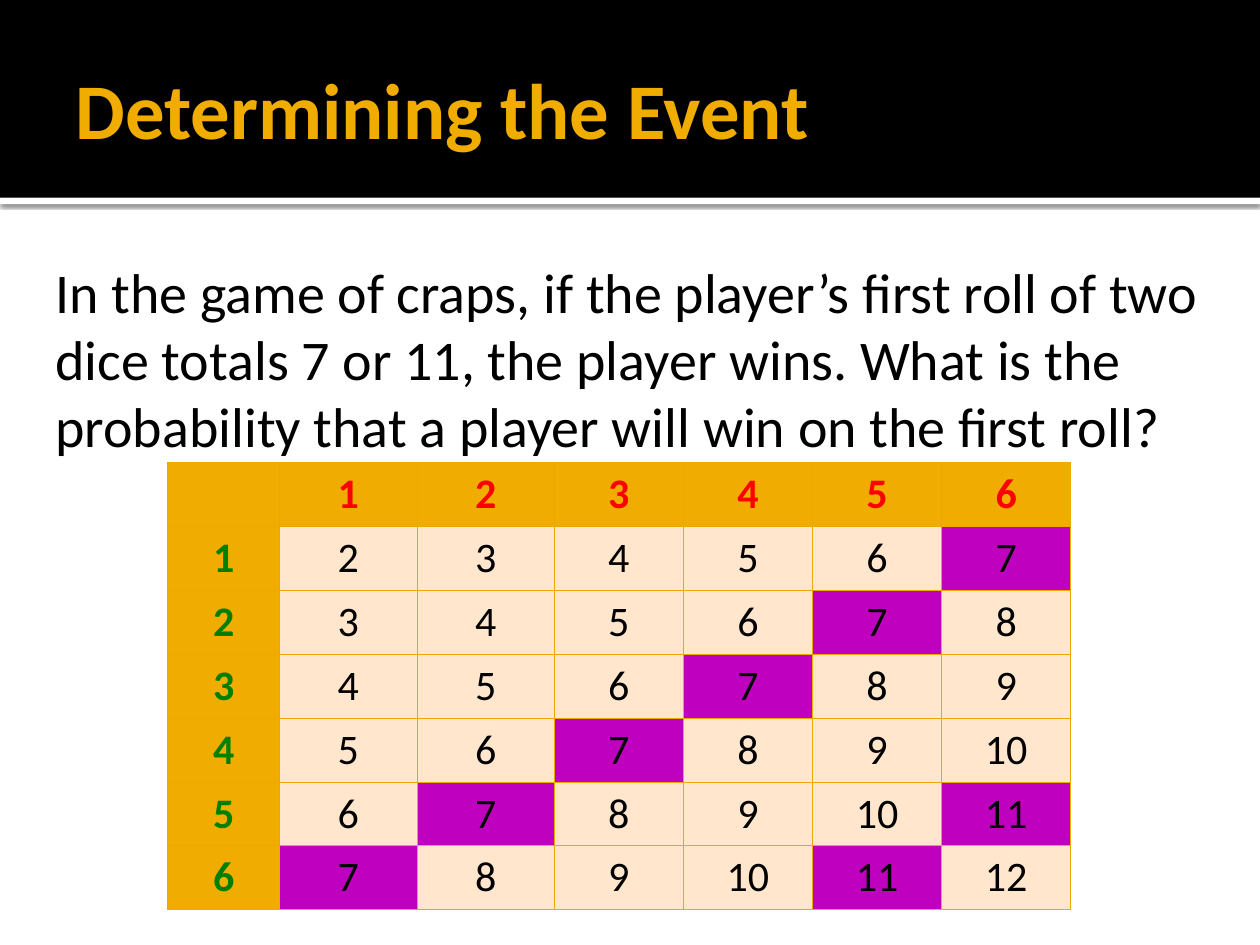
from pptx import Presentation
from pptx.dml.color import RGBColor
from pptx.enum.shapes import MSO_SHAPE as Shape
from pptx.enum.text import MSO_ANCHOR as Anchor, MSO_AUTO_SIZE as AutoSize, PP_ALIGN as Align
from pptx.oxml import parse_xml
from pptx.oxml.ns import nsdecls
from pptx.util import Inches, Pt

GOLD, CREAM, PURPLE = "F0AD00", "FFE6CC", "BF00BF"
BLACK, WHITE, RED, GREEN = "000000", "FFFFFF", "FF0000", "008000"
BORDER = "EBA900"
WINNING = (7, 11)


def color(value):
    return RGBColor.from_string(value)


def set_attrs(obj, **values):
    for name, value in values.items():
        setattr(obj, name, value)


def write(tf, text, size, ink, bold=False, align=Align.LEFT):
    p = tf.paragraphs[0]
    set_attrs(p, alignment=align, space_before=Pt(0))
    r = p.add_run()
    r.text = text
    set_attrs(r.font, name="Calibri", size=Pt(size), bold=bold)
    r.font.color.rgb = color(ink)
    return p


def place(sp, box, insets, anchor):
    set_attrs(sp, **dict(zip(("left", "top", "width", "height"), map(Inches, box))))
    tf = sp.text_frame
    set_attrs(tf, word_wrap=True, auto_size=AutoSize.NONE, vertical_anchor=anchor)
    sides = ("margin_left", "margin_top", "margin_right", "margin_bottom")
    set_attrs(tf, **dict(zip(sides, map(Inches, insets))))
    return tf


def add_band(s, box, fill):
    sp = s.shapes.add_shape(Shape.RECTANGLE, *map(Inches, box))
    sp.shadow.inherit = False
    sp.fill.solid()
    sp.fill.fore_color.rgb = color(fill)
    sp.line.fill.background()
    return sp


def add_header(s, box):
    x, y, w, h = box
    stripe = add_band(s, (x, y + h, w, 0.05), WHITE)
    effects = stripe._element.spPr.find(".//{*}effectLst")
    effects.append(parse_xml(
        f'<a:outerShdw {nsdecls("a")} blurRad="{Pt(2.5)}" dist="{Pt(0.8)}" dir="5400000" '
        f'algn="tl" rotWithShape="0"><a:srgbClr val="{BLACK}"><a:alpha val="60000"/>'
        '</a:srgbClr></a:outerShdw>'))
    band = add_band(s, box, BLACK)
    for sp in (band, stripe):
        s.shapes._spTree.insert(2, sp._element)
    tf = place(s.shapes.title, (x + 0.5, y + 0.17, w - 1, 1.37),
               (0.1, 0.05, 0.05, 0.05), Anchor.MIDDLE)
    write(tf, "Determining the Event", 45, GOLD, bold=True)


def add_question(s, box):
    tf = place(s.placeholders[1], box, (0.06, 0.1, 0.1, 0.05), Anchor.TOP)
    p = write(tf, "In the game of craps, if the player’s first roll of two dice totals "
                  "7 or 11, the player wins. What is the probability that a player will "
                  "win on the first roll?", 32, BLACK)
    pPr = p._p.get_or_add_pPr()
    pPr.set("marL", str(Inches(0.13)))
    pPr.set("indent", "0")
    pPr.append(parse_xml(f'<a:buNone {nsdecls("a")}/>'))


def format_cell(cell, text, fill, ink, bold):
    tcPr = cell._tc.get_or_add_tcPr()
    for side in ("lnL", "lnR", "lnT", "lnB"):
        tcPr.append(parse_xml(
            f'<a:{side} {nsdecls("a")} w="{Pt(0.5)}"><a:solidFill>'
            f'<a:srgbClr val="{BORDER}"/></a:solidFill></a:{side}>'))
    cell.fill.solid()
    cell.fill.fore_color.rgb = color(fill)
    if text:
        write(cell.text_frame, text, 24, ink, bold, Align.CENTER)


def add_dice_table(s, box):
    table = s.shapes.add_table(7, 7, *map(Inches, box)).table
    for col, width in zip(table.columns, [0.89] + [1.09] * 2 + [1.025] * 4):
        col.width = Inches(width)
    for row in table.rows:
        row.height = Inches(box[3] / 7)
    for i in range(7):
        for j in range(7):
            total = i + j
            if i and j:
                style = (PURPLE if total in WINNING else CREAM, BLACK, False)
            else:
                style = (GOLD, GREEN if i else RED, True)
            format_cell(table.cell(i, j), str(total) if total else "", *style)


def main():
    prs = Presentation()
    set_attrs(prs, slide_width=Inches(10), slide_height=Inches(7.5))
    s = prs.slides.add_slide(prs.slide_layouts[1])
    add_header(s, (0, 0, 10, 1.57))
    add_question(s, (0.25, 1.94, 9.5, 1.73))
    add_dice_table(s, (1.33, 3.67, 7.17, 3.55))
    prs.save("out.pptx")


if __name__ == "__main__":
    main()
